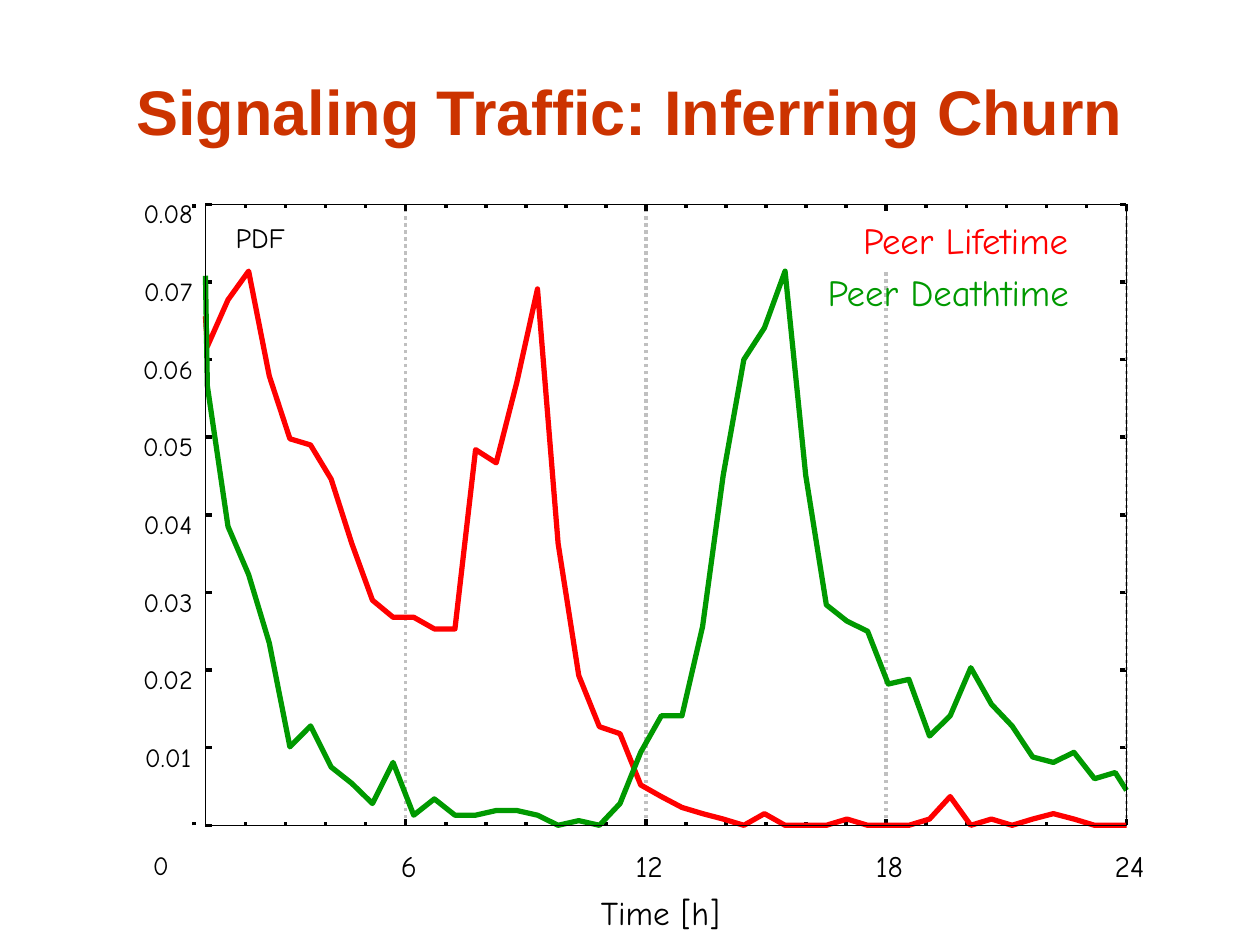
from pptx import Presentation
from pptx.dml.color import RGBColor
from pptx.enum.dml import MSO_LINE_DASH_STYLE as Dash
from pptx.enum.shapes import MSO_CONNECTOR as Connector, MSO_SHAPE as Shape
from pptx.enum.text import MSO_ANCHOR as Anchor, PP_ALIGN as Align
from pptx.oxml.ns import qn
from pptx.util import Pt

BLACK = RGBColor(0x00, 0x00, 0x00)
GRAY = RGBColor(0xC0, 0xC0, 0xC0)
RED = RGBColor(0xFF, 0x00, 0x00)
GREEN = RGBColor(0x00, 0x99, 0x00)
RUST = RGBColor(0xCC, 0x33, 0x00)
PLOT_FONT = "Comic Neue"

LEFT, RIGHT, TOP, BOTTOM = 117.4, 643.7, 116.8, 471.6
HOUR_STEP = 22.88
THOUSANDTH = (BOTTOM - TOP) / 80
FIRST_SAMPLE, SAMPLE_STEP = 118.5, 11.79
MAJOR_TICK, MINOR_TICK = 3.6, 1.8

# Probability density in thousandths, one value per sample
LIFETIME = [
    65.6, 61.7, 67.7, 71.4, 57.9, 49.8, 49.0, 44.6, 36.3, 29.0, 26.8, 26.8,
    25.3, 25.3, 48.4, 46.7, 57.1, 69.1, 36.3, 19.3, 12.7, 11.8, 5.2, 3.7,
    2.3, 1.5, 0.8, 0, 1.5, 0, 0, 0, 0.8, 0, 0, 0, 0.8, 3.7, 0, 0.8, 0, 0.8,
    1.5, 0.8, 0, 0, 0,
]
DEATHTIME = [
    70.8, 56.6, 38.5, 32.3, 23.5, 10.1, 12.8, 7.5, 5.4, 2.8, 8.1, 1.3,
    3.4, 1.3, 1.3, 1.9, 1.9, 1.3, 0, 0.6, 0, 2.8, 9.4, 14.1,
    14.1, 25.6, 45.1, 60.0, 64.1, 71.4, 45.1, 28.4, 26.3, 25.0, 18.2, 18.8,
    11.5, 14.1, 20.3, 15.6, 12.8, 8.8, 8.1, 9.4, 6.0, 6.8, 4.5,
]


def hour_x(hour):
    return RIGHT - (24 - hour) * HOUR_STEP


def density_y(thousandths):
    return BOTTOM - thousandths * THOUSANDTH


def add_title(slide, text):
    title = slide.shapes.title
    title.left, title.top, title.width, title.height = Pt(54), Pt(42), Pt(612), Pt(42)
    frame = title.text_frame
    frame.text = text
    frame.vertical_anchor = Anchor.MIDDLE
    paragraph = frame.paragraphs[0]
    paragraph.alignment = Align.CENTER
    font = paragraph.runs[0].font
    font.name, font.size, font.bold = "Arial", Pt(36), True
    font.color.rgb = RUST


def add_label(slide, text, left, top, width, height, size, color=BLACK, align=Align.LEFT):
    box = slide.shapes.add_textbox(Pt(left), Pt(top), Pt(width), Pt(height))
    frame = box.text_frame
    frame.margin_left = frame.margin_right = frame.margin_top = frame.margin_bottom = 0
    frame.word_wrap = True
    frame.text = text
    paragraph = frame.paragraphs[0]
    paragraph.alignment = align
    font = paragraph.runs[0].font
    font.name, font.size = PLOT_FONT, Pt(size)
    font.color.rgb = color


def add_line(slide, x1, y1, x2, y2, color=BLACK, dash=None):
    line = slide.shapes.add_connector(Connector.STRAIGHT, Pt(x1), Pt(y1), Pt(x2), Pt(y2))
    line.line.color.rgb = color
    line.line.width = Pt(0)
    if dash is not None:
        line.line.dash_style = dash
    properties = line._element.spPr
    properties.append(properties.makeelement(qn("a:effectLst"), {}))


def add_grid_line(slide, x, start, end):
    add_line(slide, x, start, x, end, GRAY, Dash.ROUND_DOT)


def add_vertical_ticks(slide, x, length):
    """Draw a tick inward from the bottom and from the top of the plot."""
    add_line(slide, x, BOTTOM, x, BOTTOM - length)
    add_line(slide, x, TOP, x, TOP + length)


def add_density_axis(slide):
    for step in range(9):
        y = density_y(step * 10)
        add_line(slide, LEFT, y, LEFT + MAJOR_TICK, y)
        add_line(slide, RIGHT, y, RIGHT - MAJOR_TICK, y)
        if step:
            add_label(slide, f"0.0{step}", 78.5, y - 3.8, 35, 18, 15, align=Align.CENTER)


def add_hour_axis(slide):
    add_label(slide, "0", 85, 485.4, 14, 18, 15, align=Align.CENTER)
    add_vertical_ticks(slide, 110.9, MINOR_TICK)
    for hour in range(2, 25):
        x = hour_x(hour)
        if hour % 6:
            add_vertical_ticks(slide, x, MINOR_TICK)
            continue
        if hour == 18:  # leaves room for the legend
            add_grid_line(slide, x, BOTTOM, 154)
            add_grid_line(slide, x, TOP + MAJOR_TICK, TOP)
        else:
            add_grid_line(slide, x, BOTTOM, TOP)
        add_vertical_ticks(slide, x, MAJOR_TICK)
        add_label(slide, str(hour), x - 10.2, 484.6, 24, 20, 17, align=Align.CENTER)
    add_label(slide, "Time [h]", 343.4, 509.8, 74, 23, 19)


def add_curve(slide, densities, color):
    """Draw evenly spaced samples, with both ends on the plot's sides."""
    inner = [FIRST_SAMPLE + i * SAMPLE_STEP for i in range(len(densities) - 2)]
    points = [
        (Pt(x), Pt(density_y(density)))
        for x, density in zip([LEFT, *inner, RIGHT], densities)
    ]
    builder = slide.shapes.build_freeform(*points[0])
    builder.add_line_segments(points[1:], close=False)
    curve = builder.convert_to_shape()
    curve.shadow.inherit = False
    curve.fill.background()
    curve.line.color.rgb = color
    curve.line.width = Pt(3)


def add_frame(slide):
    frame = slide.shapes.add_shape(
        Shape.RECTANGLE, Pt(LEFT), Pt(TOP), Pt(RIGHT - LEFT), Pt(BOTTOM - TOP)
    )
    frame.shadow.inherit = False
    frame.fill.background()
    frame.line.color.rgb = BLACK
    frame.line.width = Pt(0)


def main():
    presentation = Presentation()
    presentation.slide_width, presentation.slide_height = Pt(720), Pt(540)
    slide = presentation.slides.add_slide(presentation.slide_layouts[5])
    add_title(slide, "Signaling Traffic: Inferring Churn")
    add_label(slide, "PDF", 134.6, 126, 34, 21, 16)
    add_density_axis(slide)
    add_hour_axis(slide)
    add_label(slide, "Peer Lifetime", 493.2, 124.6, 133, 25, 21, RED)
    add_curve(slide, LIFETIME, RED)
    add_label(slide, "Peer Deathtime", 473, 154, 153, 25, 21, GREEN)
    add_curve(slide, DEATHTIME, GREEN)
    add_frame(slide)
    presentation.save("out.pptx")


if __name__ == "__main__":
    main()
